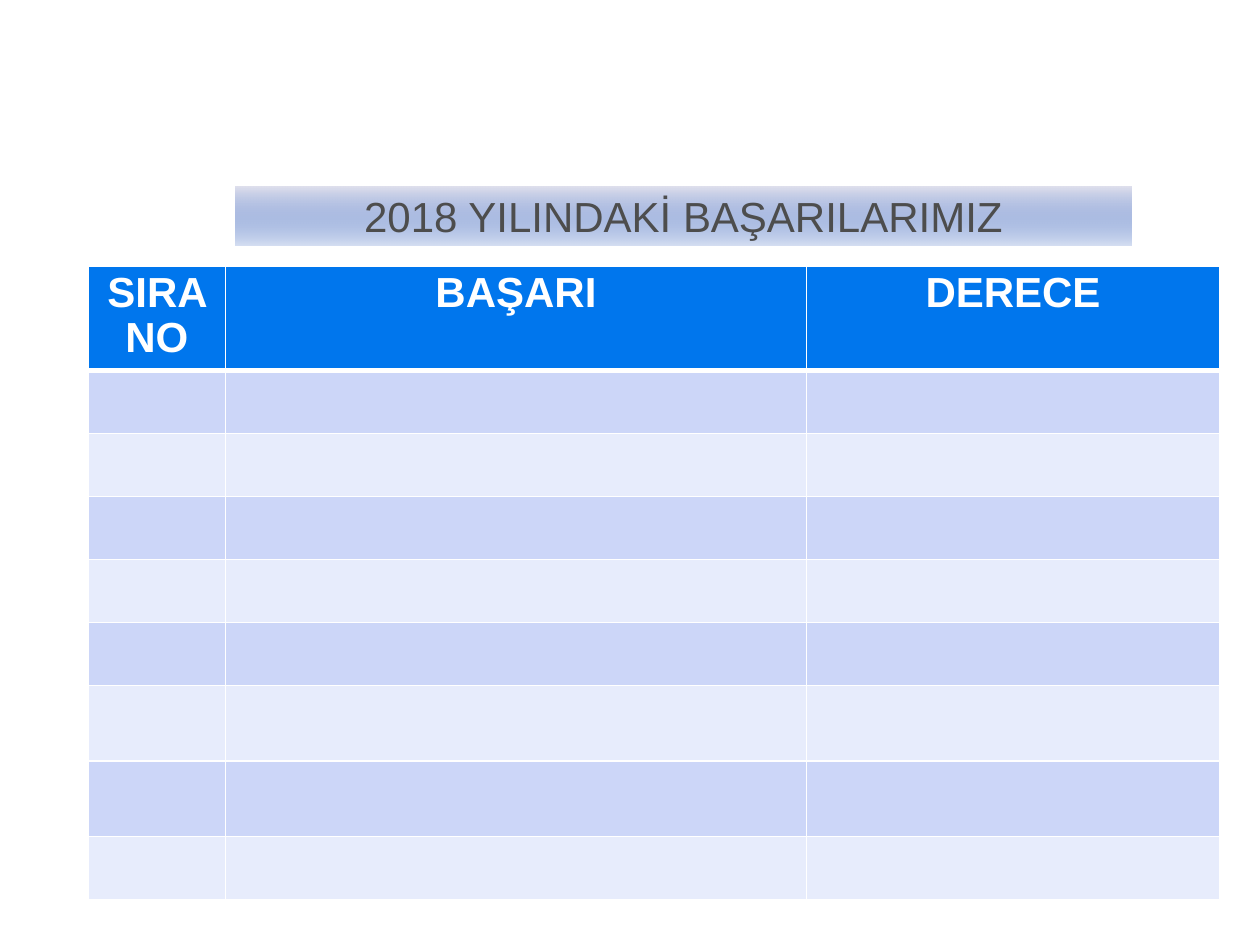
from dataclasses import dataclass

from lxml import etree
from pptx import Presentation
from pptx.dml.color import RGBColor
from pptx.enum.text import MSO_ANCHOR, MSO_AUTO_SIZE, PP_ALIGN
from pptx.oxml.ns import qn
from pptx.util import Inches, Pt

CENTER = PP_ALIGN.CENTER
MIDDLE = MSO_ANCHOR.MIDDLE
NO_AUTOFIT = MSO_AUTO_SIZE.NONE

WHITE = "FFFFFF"
TITLE_GRAY = "4D4D4D"
HEADER_BLUE = "0076ED"
BANDS = ("CCD6F8", "E7ECFC")


@dataclass
class Column:
    heading: str
    width: float


COLUMNS = (Column("SIRA NO", 1.09), Column("BAŞARI", 4.61), Column("DERECE", 3.28))
ROW_HEIGHTS = (0.83, 0.5, 0.5, 0.5, 0.5, 0.5, 0.6, 0.6, 0.5)


def rgb(value: str) -> RGBColor:
    return RGBColor.from_string(value)


def write_text(text_frame, text: str, *, color: str, size: float = 24,
               bold: bool = False, spacing: float = 1.0) -> None:
    paragraph = text_frame.paragraphs[0]
    paragraph.alignment = CENTER
    paragraph.line_spacing = spacing
    run = paragraph.add_run()
    run.text = text
    run.font.name = "Arial"
    run.font.size = Pt(size)
    run.font.bold = bold
    run.font.color.rgb = rgb(color)


def set_borders(cell, bottom_width: float) -> None:
    properties = cell._tc.get_or_add_tcPr()
    widths = {"a:lnL": 1, "a:lnR": 1, "a:lnT": 1, "a:lnB": bottom_width}
    for position, (tag, width) in enumerate(widths.items()):
        line = etree.Element(qn(tag), w=str(Pt(width)))
        fill = etree.SubElement(line, qn("a:solidFill"))
        etree.SubElement(fill, qn("a:srgbClr"), val=WHITE)
        properties.insert(position, line)


def format_title(title) -> None:
    title.left, title.top = Inches(1.87), Inches(1.48)
    title.width, title.height = Inches(7.11), Inches(0.47)

    # Rounded outline
    geometry = etree.SubElement(title._element.spPr, qn("a:prstGeom"), prst="roundRect")
    etree.SubElement(geometry, qn("a:avLst"))

    # Vertical gradient fading to a nearly clear blue
    title.fill.gradient()
    title.fill.gradient_angle = 270
    stops = title.fill.gradient_stops
    for stop, color, position in zip(stops, ("DFE0ED", "0038AE"), (0, 1)):
        stop.color.rgb = rgb(color)
        stop.position = position
    last_color = stops[1]._gs.find(qn("a:srgbClr"))
    etree.SubElement(last_color, qn("a:alpha"), val="15000")
    title.line.fill.background()

    text_frame = title.text_frame
    text_frame.auto_size = NO_AUTOFIT
    text_frame.word_wrap = False
    text_frame.vertical_anchor = MIDDLE
    write_text(text_frame, "2018 YILINDAKİ BAŞARILARIMIZ", color=TITLE_GRAY)


def add_achievement_table(slide) -> None:
    table = slide.shapes.add_table(
        len(ROW_HEIGHTS), len(COLUMNS), Inches(0.7), Inches(2.11),
        Inches(sum(column.width for column in COLUMNS)), Inches(sum(ROW_HEIGHTS)),
    ).table
    for table_column, column in zip(table.columns, COLUMNS):
        table_column.width = Inches(column.width)
    for row_index, height in enumerate(ROW_HEIGHTS):
        table.rows[row_index].height = Inches(height)
        is_header = row_index == 0
        for column_index, column in enumerate(COLUMNS):
            cell = table.cell(row_index, column_index)
            cell.fill.solid()
            cell.fill.fore_color.rgb = rgb(
                HEADER_BLUE if is_header else BANDS[(row_index - 1) % 2])
            set_borders(cell, bottom_width=3 if is_header else 1)
            if is_header:
                write_text(cell.text_frame, column.heading, color=WHITE,
                           bold=True, spacing=0.95)


def main() -> None:
    presentation = Presentation()
    presentation.slide_width, presentation.slide_height = Inches(10), Inches(7.5)
    slide = presentation.slides.add_slide(presentation.slide_layouts[5])
    format_title(slide.shapes.title)
    add_achievement_table(slide)
    presentation.save("out.pptx")


if __name__ == "__main__":
    main()
